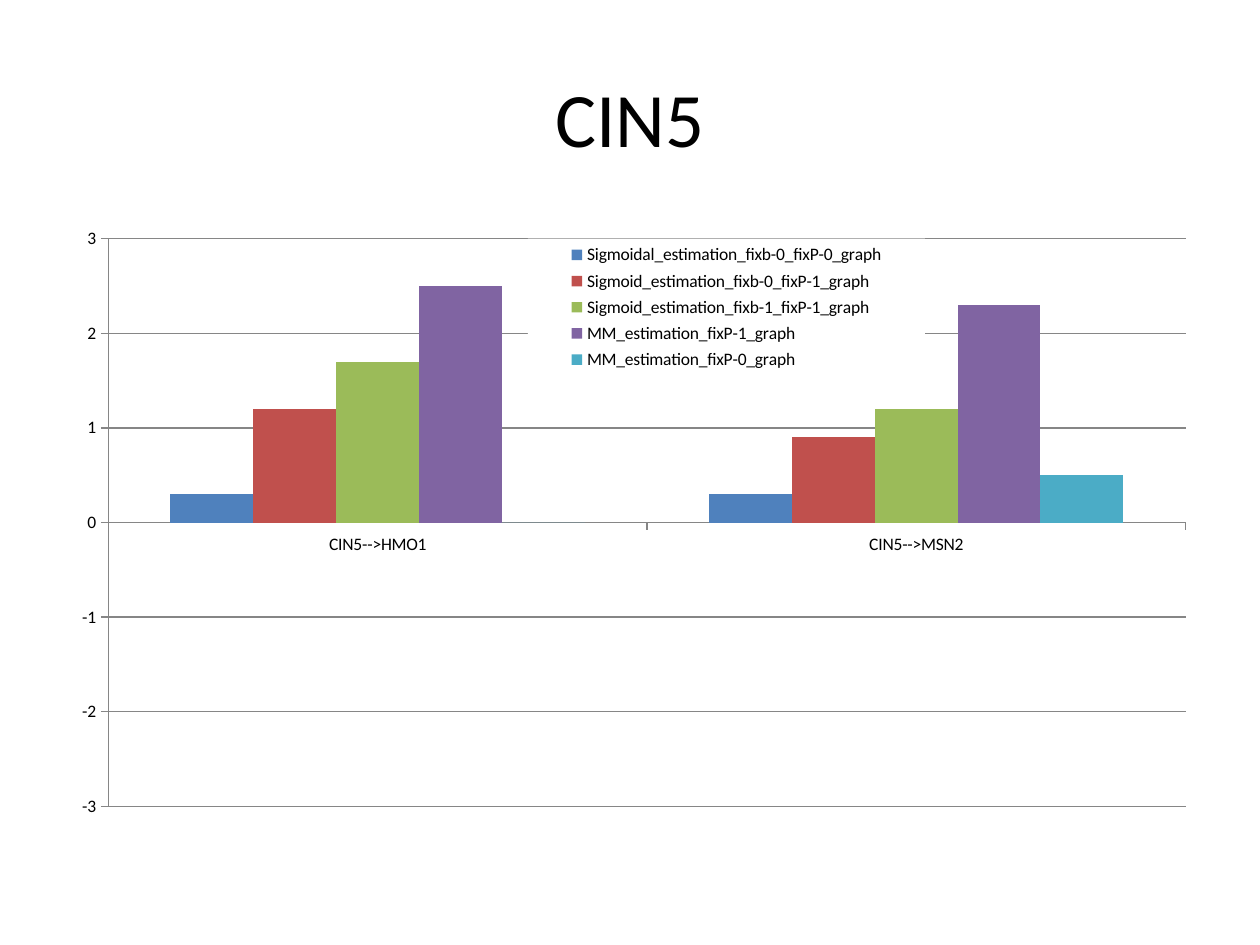
from lxml import etree
from pptx import Presentation, util as u
from pptx.chart.data import CategoryChartData
from pptx.dml.color import RGBColor
from pptx.enum import chart as ch, text
from pptx.oxml import parse_xml
from pptx.oxml.ns import nsdecls, qn

BLACK = RGBColor(0x00, 0x00, 0x00)
GRAY = RGBColor(0x86, 0x86, 0x86)
BLUE = RGBColor(0x4F, 0x81, 0xBD)
RED = RGBColor(0xC0, 0x50, 0x4D)
GREEN = RGBColor(0x9B, 0xBB, 0x59)
PURPLE = RGBColor(0x80, 0x64, 0xA2)
TEAL = RGBColor(0x4B, 0xAC, 0xC6)
WHITE = RGBColor(0xFF, 0xFF, 0xFF)

CATS = ["CIN5-->HMO1", "CIN5-->MSN2"]
SERIES = [
    ("Sigmoidal_estimation_fixb-0_fixP-0_graph", (0.3, 0.3), BLUE),
    ("Sigmoid_estimation_fixb-0_fixP-1_graph", (1.2, 0.9), RED),
    ("Sigmoid_estimation_fixb-1_fixP-1_graph", (1.7, 1.2), GREEN),
    ("MM_estimation_fixP-1_graph", (2.5, 2.3), PURPLE),
    ("MM_estimation_fixP-0_graph", (0, 0.5), TEAL),
]


def px(n):
    return u.Emu(round(n * 914400 / 126))


def layout(x, y, w, h, inner=False):
    node = parse_xml(f"<c:layout {nsdecls('c')}><c:manualLayout/></c:layout>")
    pairs = [("layoutTarget", "inner")] if inner else []
    pairs += [("xMode", "edge"), ("yMode", "edge"),
              ("x", x), ("y", y), ("w", w), ("h", h)]
    for tag, val in pairs:
        etree.SubElement(node[0], qn("c:" + tag)).set("val", str(val))
    return node


class Deck:
    """Holds the slide and its style, and adds each kind of element."""

    def __init__(self, wide, high, face="Calibri"):
        self.prs = Presentation()
        self.prs.slide_width, self.prs.slide_height = px(wide), px(high)
        self.slide = self.prs.slides.add_slide(self.prs.slide_layouts[6])
        self.face = face

    def style(self, font, size):
        font.name, font.size = self.face, u.Pt(size)
        font.color.rgb = BLACK

    def title(self, words, box, size):
        frame = self.slide.shapes.add_textbox(*map(px, box)).text_frame
        frame.word_wrap = True
        frame.vertical_anchor = text.MSO_ANCHOR.MIDDLE
        para = frame.paragraphs[0]
        para.alignment = text.PP_ALIGN.CENTER
        run = para.add_run()
        run.text = words
        self.style(run.font, size)

    def axis(self, axis):
        axis.major_tick_mark = ch.XL_TICK_MARK.OUTSIDE
        axis.minor_tick_mark = ch.XL_TICK_MARK.NONE
        self.line(axis.format.line)

    def line(self, line):
        line.color.rgb, line.width = GRAY, u.Pt(0.75)

    def bars(self, cats, series, box, size):
        data = CategoryChartData()
        data.categories = cats
        for name, vals, _ in series:
            data.add_series(name, vals)
        chart = self.slide.shapes.add_chart(
            ch.XL_CHART_TYPE.COLUMN_CLUSTERED, *map(px, box), data).chart
        self.style(chart.font, size)
        chart.has_title = False
        plot = chart.plots[0]
        plot.gap_width, plot.overlap = 150, 0
        plot.vary_by_categories = False
        for item, (_, _, color) in zip(plot.series, series):
            item.invert_if_negative = False
            item.format.fill.solid()
            item.format.fill.fore_color.rgb = color
        self.axis(chart.category_axis)
        axis = chart.value_axis
        self.axis(axis)
        axis.minimum_scale, axis.maximum_scale, axis.major_unit = -3, 3, 1
        axis.has_major_gridlines = True
        self.line(axis.major_gridlines.format.line)
        axis.tick_labels.number_format = "General"
        axis.tick_labels.number_format_is_linked = False
        return chart

    def place(self, chart, plot, key):
        area = next(chart.element.iter(qn("c:plotArea")))
        for old in area.findall(qn("c:layout")):
            area.remove(old)
        area.insert(0, layout(*plot, inner=True))
        chart.has_legend = True
        legend = next(chart.element.iter(qn("c:legend")))
        del legend[:]
        etree.SubElement(legend, qn("c:legendPos")).set("val", "r")
        legend.append(layout(*key))
        etree.SubElement(legend, qn("c:overlay")).set("val", "0")
        legend.append(parse_xml(
            f"<c:spPr {nsdecls('c', 'a')}><a:solidFill>"
            f'<a:srgbClr val="{WHITE}"/></a:solidFill></c:spPr>'))


def main():
    deck = Deck(1260, 945)
    deck.title("CIN5", (63, 38, 1134, 158), 44)
    chart = deck.bars(CATS, SERIES, (63, 220, 1134, 624), 10)
    deck.place(chart, (0.04, 0.03, 0.95, 0.91), (0.41, 0.03, 0.35, 0.22))
    deck.prs.save("out.pptx")


if __name__ == "__main__":
    main()
